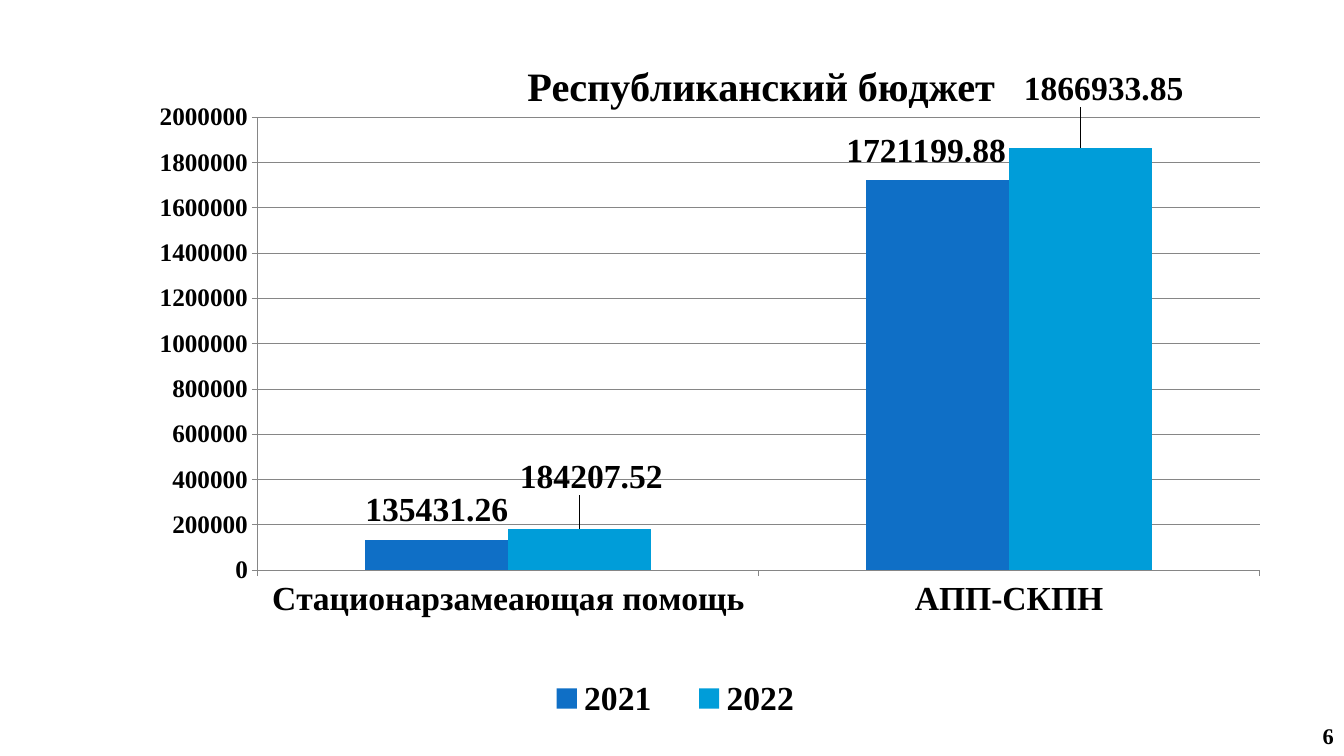
from dataclasses import dataclass

from lxml.etree import SubElement
from pptx import Presentation
from pptx.chart.data import CategoryChartData
from pptx.dml.color import RGBColor
from pptx.enum.chart import XL_CHART_TYPE, XL_LABEL_POSITION, XL_LEGEND_POSITION, XL_TICK_MARK
from pptx.enum.text import MSO_ANCHOR, PP_ALIGN
from pptx.oxml.ns import qn
from pptx.util import Pt

COLORS = {"text": "000000", "grid": "868686", "2021": "0F6FC6", "2022": "009DD9"}
FONT = "Times New Roman"
CATEGORIES = ["Стационарзамеающая помощь", "АПП-СКПН"]


@dataclass
class YearSeries:
    name: str
    values: list[float]
    label_offsets: list[tuple[float, float]]


YEARS = [
    YearSeries("2021", [135431.26, 1721199.88], [(0, -0.01), (-0.01, -0.01)]),
    YearSeries("2022", [184207.52, 1866933.85], [(0.01, -0.04), (0.02, -0.05)]),
]


def set_font(font, size: float) -> None:
    font.name = FONT
    font.size = Pt(size)
    font.bold = True
    font.color.rgb = RGBColor.from_string(COLORS["text"])


def set_layout(parent, index: int, **settings) -> None:
    """Give a chart part a manual layout, placed as child number index."""
    for old in parent.findall(qn("c:layout")):
        parent.remove(old)
    layout = SubElement(parent, qn("c:layout"))
    manual = SubElement(layout, qn("c:manualLayout"))
    for tag, value in settings.items():
        SubElement(manual, qn(f"c:{tag}")).set("val", str(value))
    parent.insert(index, layout)


def style_line(line) -> None:
    line.color.rgb = RGBColor.from_string(COLORS["grid"])
    line.width = Pt(0.75)


def style_axes(chart) -> None:
    for axis, size in ((chart.category_axis, 24), (chart.value_axis, 18)):
        set_font(axis.tick_labels.font, size)
        axis.major_tick_mark = XL_TICK_MARK.OUTSIDE
        style_line(axis.format.line)
    values = chart.value_axis
    values.minimum_scale, values.maximum_scale, values.major_unit = 0, 2000000, 200000
    values.has_major_gridlines = True
    style_line(values.major_gridlines.format.line)


def style_series(chart) -> None:
    plot = chart.plots[0]
    plot.gap_width, plot.overlap, plot.vary_by_categories = 150, 0, False
    for series, year in zip(plot.series, YEARS):
        series.format.fill.solid()
        series.format.fill.fore_color.rgb = RGBColor.from_string(COLORS[year.name])
        for i in range(len(year.values)):
            label = series.points[i].data_label
            set_font(label.font, 24)
            label.position = XL_LABEL_POSITION.OUTSIDE_END
    offsets = [offset for year in YEARS for offset in year.label_offsets]
    for label, (x, y) in zip(chart.element.xpath(".//c:dLbl"), offsets):
        set_layout(label, 1, x=x, y=y)


def add_budget_chart(slide) -> None:
    data = CategoryChartData()
    data.categories = CATEGORIES
    for year in YEARS:
        data.add_series(year.name, year.values)
    chart = slide.shapes.add_chart(XL_CHART_TYPE.COLUMN_CLUSTERED, Pt(92.16), Pt(28.08),
                                   Pt(821.52), Pt(511.92), data).chart
    set_font(chart.font, 24)
    style_axes(chart)
    style_series(chart)

    chart.has_title = True
    p = chart.chart_title.text_frame.paragraphs[0]
    p.text = "Республиканский бюджет"
    set_font(p.font, 28.8)
    chart.has_legend = True
    chart.legend.position = XL_LEGEND_POSITION.RIGHT
    chart.legend.include_in_layout = False
    set_font(chart.legend.font, 24)

    root = chart.element
    set_layout(root.xpath(".//c:plotArea")[0], 0, layoutTarget="inner",
               xMode="edge", yMode="edge", x=0.112, y=0.109, w=0.871, h=0.632)
    set_layout(root.xpath("c:chart/c:title")[0], 1, xMode="edge", yMode="edge", x=0.34, y=0.02)
    set_layout(root.xpath(".//c:legend")[0], 1, xMode="edge", yMode="edge",
               x=0.34, y=0.88, w=0.27, h=0.08)


def add_page_number(slide, number: str) -> None:
    tf = slide.shapes.add_textbox(Pt(735.84), Pt(511.2), Pt(223.92), Pt(28.8)).text_frame
    tf.word_wrap = True
    tf.vertical_anchor = MSO_ANCHOR.MIDDLE
    p = tf.paragraphs[0]
    p.text = number
    p.alignment = PP_ALIGN.RIGHT
    set_font(p.font, 16)


def main() -> None:
    prs = Presentation()
    prs.slide_width, prs.slide_height = Pt(960), Pt(540)
    slide = prs.slides.add_slide(prs.slide_layouts[6])
    add_budget_chart(slide)
    add_page_number(slide, "6")
    prs.save("out.pptx")


if __name__ == "__main__":
    main()
